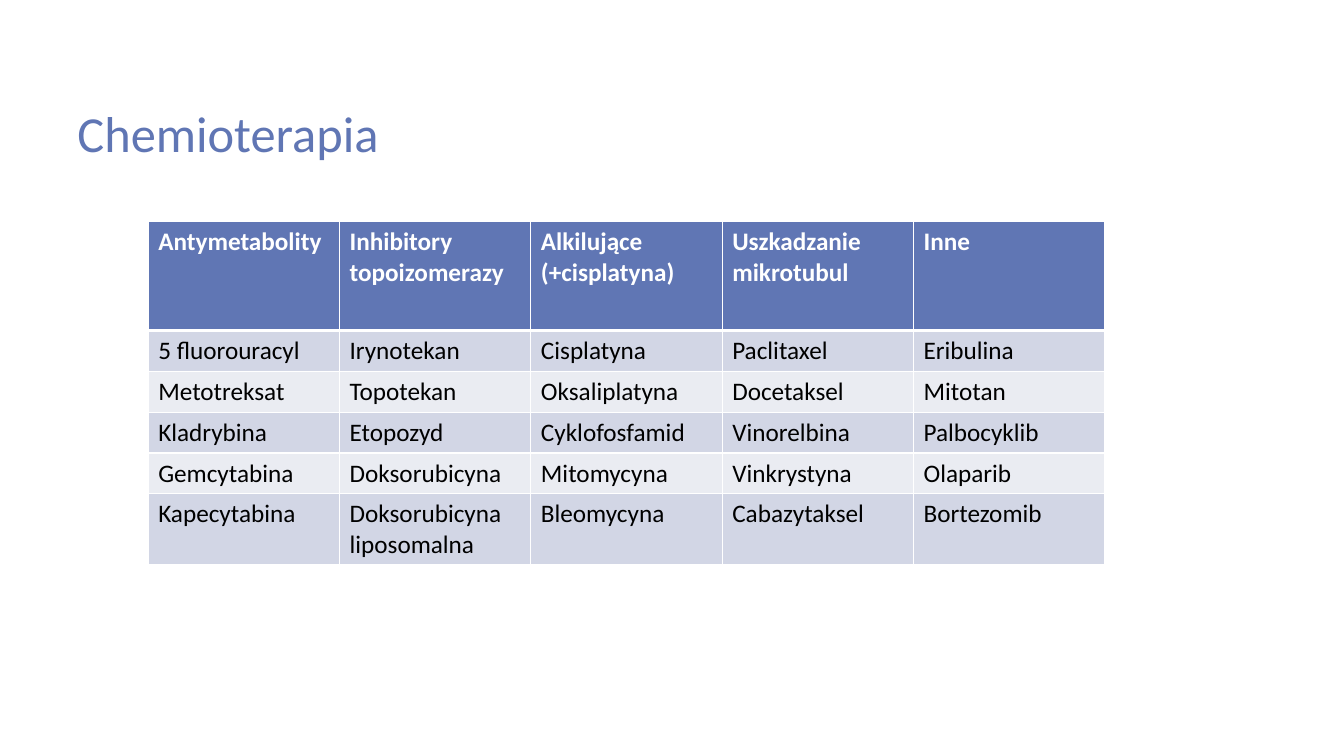
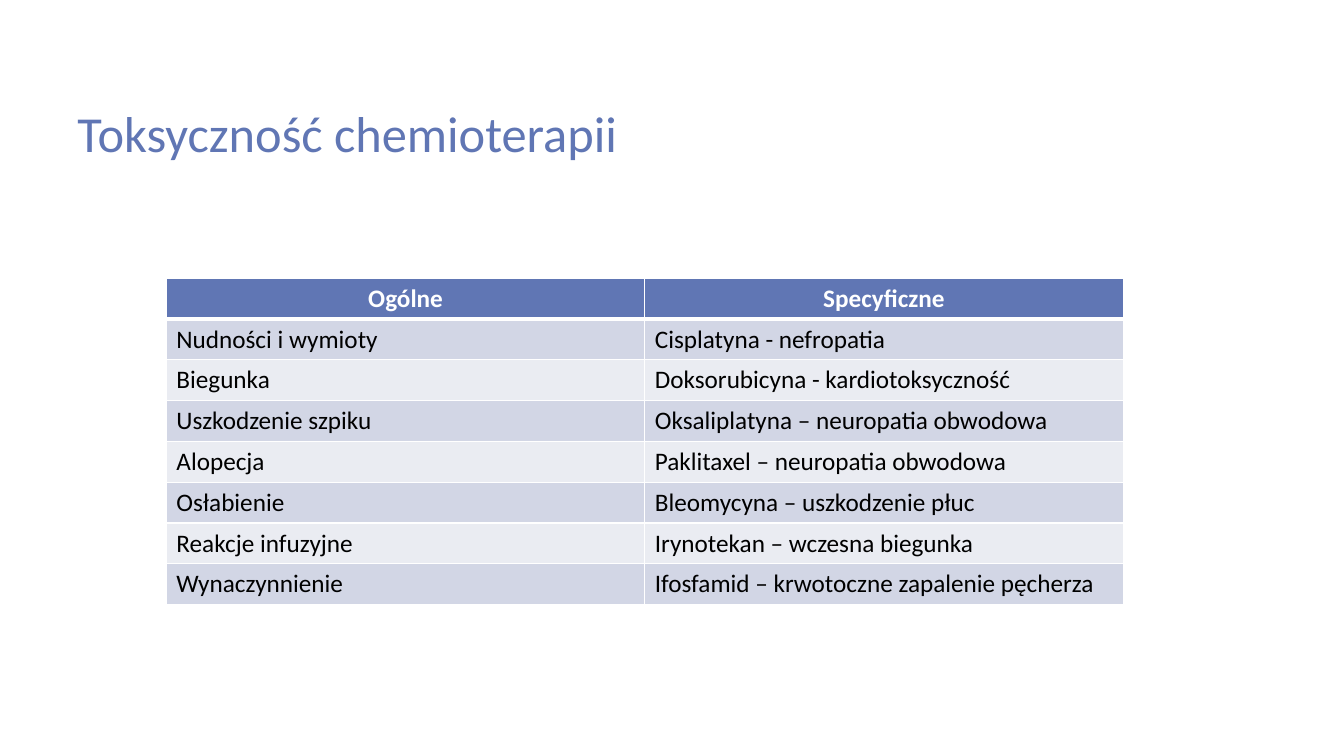
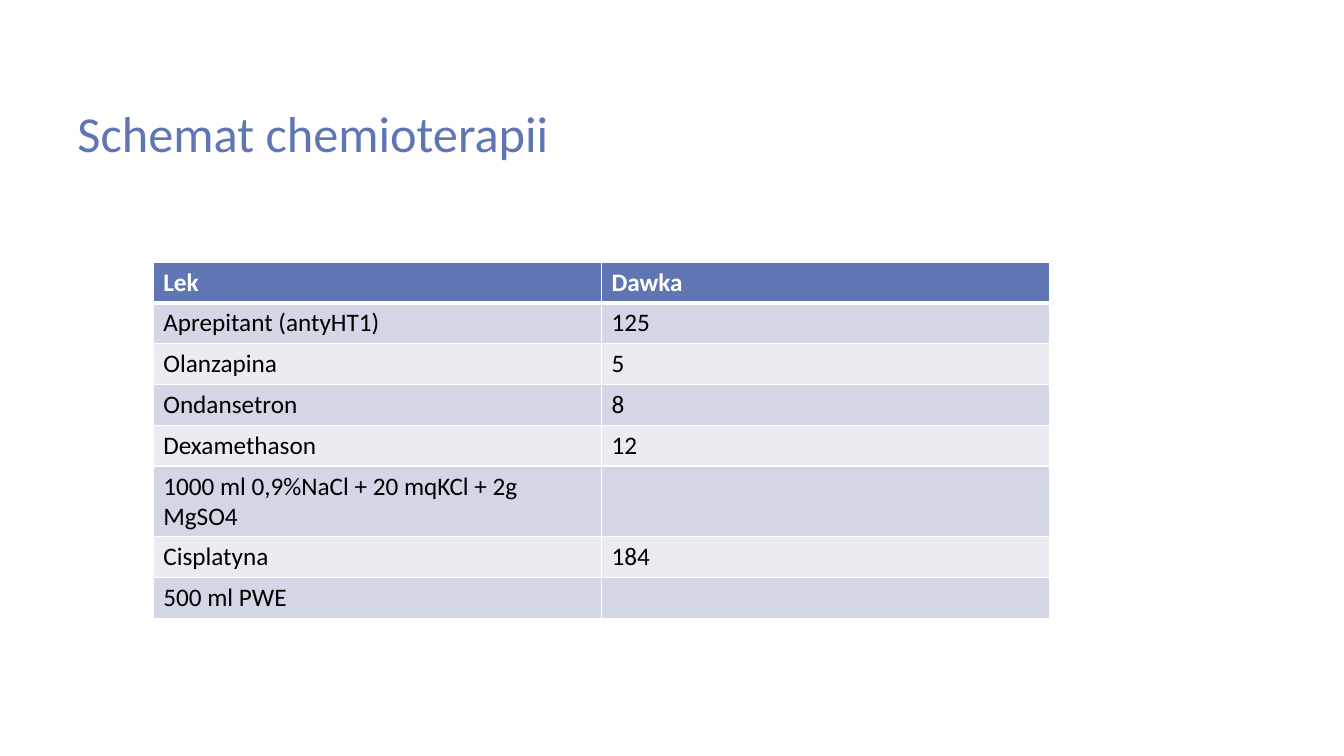
import lxml.etree
import pptx
import pptx.dml.color
import pptx.enum.text
import pptx.oxml.ns
import pptx.util

Inches = pptx.util.Inches
Pt = pptx.util.Pt
PP_ALIGN = pptx.enum.text.PP_ALIGN

FONT = "Calibri"
ACCENT = "6076B4"
WHITE = "FFFFFF"
BLACK = "000000"
BANDS = ("D2D6E5", "EAECF2")
TITLE_BOX = (0.67, 0.41, 9.49, 1.25)
ROW_HEIGHT = 3.24 / 8

AGENTS = [
    ("Antymetabolity", "Inhibitory topoizomerazy", "Alkilujące (+cisplatyna)",
     "Uszkadzanie mikrotubul", "Inne"),
    ("5 fluorouracyl", "Irynotekan", "Cisplatyna", "Paclitaxel", "Eribulina"),
    ("Metotreksat", "Topotekan", "Oksaliplatyna", "Docetaksel", "Mitotan"),
    ("Kladrybina", "Etopozyd", "Cyklofosfamid", "Vinorelbina", "Palbocyklib"),
    ("Gemcytabina", "Doksorubicyna", "Mitomycyna", "Vinkrystyna", "Olaparib"),
    ("Kapecytabina", "Doksorubicyna liposomalna", "Bleomycyna", "Cabazytaksel", "Bortezomib"),
]
TOXICITY = [
    ("Ogólne", "Specyficzne"),
    ("Nudności i wymioty", "Cisplatyna - nefropatia"),
    ("Biegunka", "Doksorubicyna - kardiotoksyczność"),
    ("Uszkodzenie szpiku", "Oksaliplatyna – neuropatia obwodowa"),
    ("Alopecja", "Paklitaxel – neuropatia obwodowa"),
    ("Osłabienie", "Bleomycyna – uszkodzenie płuc"),
    ("Reakcje infuzyjne", "Irynotekan – wczesna biegunka"),
    ("Wynaczynnienie", "Ifosfamid – krwotoczne zapalenie pęcherza"),
]
REGIMEN = [
    ("Lek", "Dawka"),
    ("Aprepitant (antyHT1)", "125"),
    ("Olanzapina", "5"),
    ("Ondansetron", "8"),
    ("Dexamethason", "12"),
    ("1000 ml 0,9%NaCl + 20 mqKCl + 2g MgSO4", ""),
    ("Cisplatyna", "184"),
    ("500 ml PWE", ""),
]


def rgb(value):
    """Turn a hex string into a colour."""
    return pptx.dml.color.RGBColor.from_string(value)


def style_text(frame, size, color, bold=False, align=PP_ALIGN.LEFT):
    """Format every paragraph and run of a text frame."""
    for paragraph in frame.paragraphs:
        paragraph.alignment = align
        for run in paragraph.runs:
            run.font.name = FONT
            run.font.size = Pt(size)
            run.font.bold = bold
            run.font.color.rgb = rgb(color)


def set_borders(cell, top, bottom):
    """Draw white cell borders, with top and bottom widths in points."""
    properties = cell._tc.get_or_add_tcPr()
    for side, width in (("L", 1), ("R", 1), ("T", top), ("B", bottom)):
        line = lxml.etree.SubElement(
            properties, pptx.oxml.ns.qn(f"a:ln{side}"), w=str(Pt(width)))
        fill = lxml.etree.SubElement(line, pptx.oxml.ns.qn("a:solidFill"))
        lxml.etree.SubElement(fill, pptx.oxml.ns.qn("a:srgbClr"), val=WHITE)


def add_title(slide, text, box):
    """Place the slide title at the bottom of its box."""
    frame = slide.shapes.add_textbox(*map(Inches, box)).text_frame
    frame.word_wrap = True
    frame.vertical_anchor = pptx.enum.text.MSO_ANCHOR.BOTTOM
    frame.text = text
    style_text(frame, 36, ACCENT)


def add_banded_table(slide, rows, left, top, width, header_height, header_align):
    """Place a table with equal columns, a coloured header and banded rows."""
    height = header_height + ROW_HEIGHT * (len(rows) - 1)
    table = slide.shapes.add_table(
        len(rows), len(rows[0]), *map(Inches, (left, top, width, height))).table
    table.horz_banding = False
    for column in table.columns:
        column.width = Inches(width / len(rows[0]))
    for index, values in enumerate(rows):
        header = index == 0
        table.rows[index].height = Inches(header_height if header else ROW_HEIGHT)
        for cell, value in zip(table.rows[index].cells, values):
            set_borders(cell, 3 if index == 1 else 1, 3 if header else 1)
            cell.fill.solid()
            cell.fill.fore_color.rgb = rgb(ACCENT if header else BANDS[(index - 1) % 2])
            cell.text_frame.text = value
            style_text(cell.text_frame, 18, WHITE if header else BLACK, header,
                       header_align if header else PP_ALIGN.LEFT)


def add_table_slide(deck, title, rows, left, top, width,
                    header_height=ROW_HEIGHT, header_align=PP_ALIGN.LEFT):
    """Add a slide made of a title and a table."""
    slide = deck.slides.add_slide(deck.slide_layouts[6])
    add_title(slide, title, TITLE_BOX)
    add_banded_table(slide, rows, left, top, width, header_height, header_align)


def main():
    """Build and save the deck."""
    deck = pptx.Presentation()
    deck.slide_width, deck.slide_height = Inches(13.33), Inches(7.5)
    add_table_slide(deck, "Chemioterapia", AGENTS, 1.47, 2.2, 9.49, header_height=1.08)
    add_table_slide(deck, "Toksyczność chemioterapii", TOXICITY, 1.65, 2.76, 9.49,
                    header_align=PP_ALIGN.CENTER)
    add_table_slide(deck, "Schemat chemioterapii", REGIMEN, 1.52, 2.6, 8.89)
    deck.save("out.pptx")


if __name__ == "__main__":
    main()
